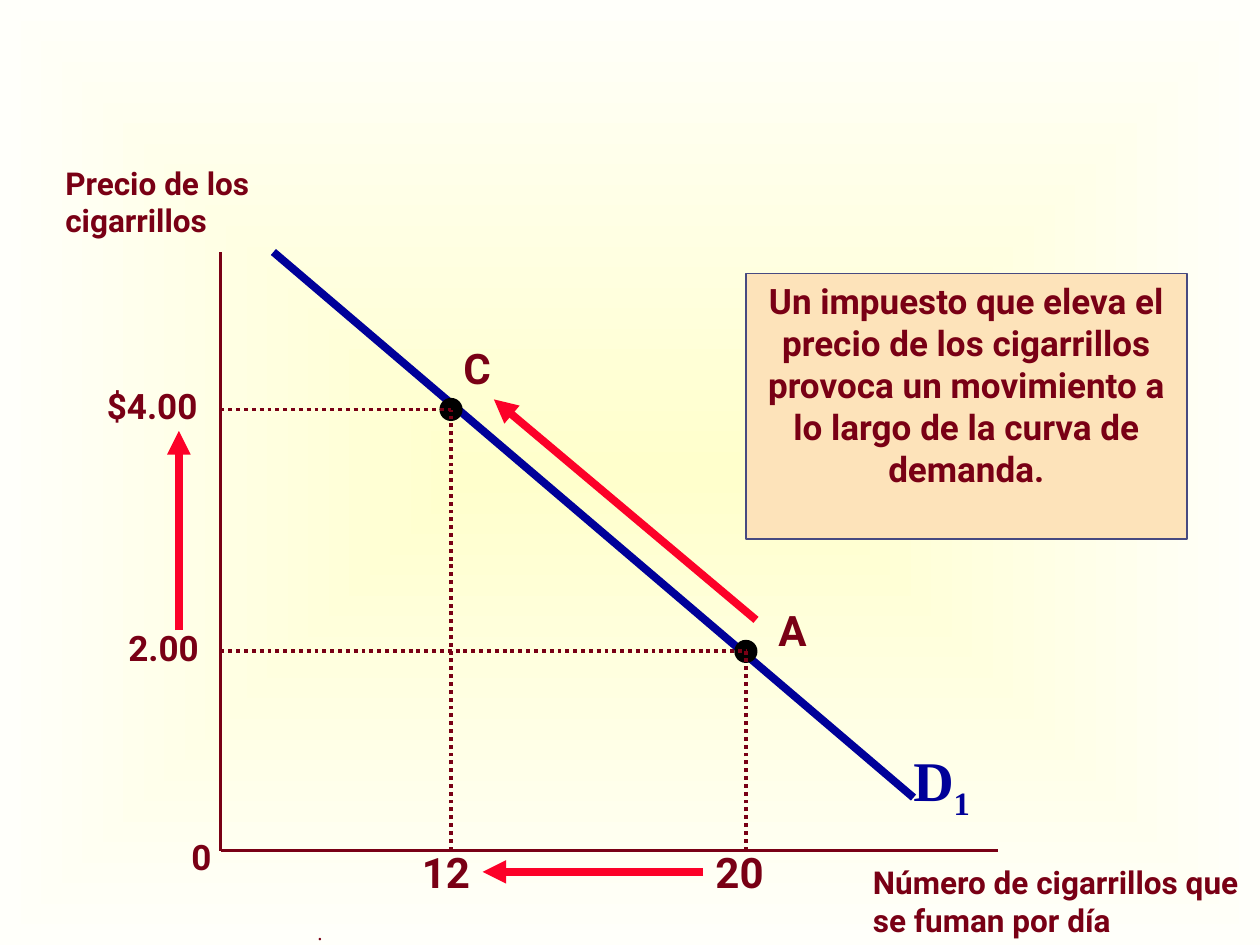
import pptx
import pptx.dml.color
import pptx.enum.dml
import pptx.enum.shapes
import pptx.enum.text
import pptx.oxml.ns
import pptx.util
import lxml.etree

Inches = pptx.util.Inches
Pt = pptx.util.Pt
qn = pptx.oxml.ns.qn

MAROON = "790015"
NAVY = "000099"
RED = "FC0128"
BLACK = "000000"
ORIGIN_X, ORIGIN_Y = 1.75, 6.75
POINT_C = (3.58, 3.25)
POINT_A = (5.92, 5.17)
DOT_SIZE = 0.17


def color(hex_string):
    return pptx.dml.color.RGBColor.from_string(hex_string)


def set_background(slide, center, edge):
    fill = slide.background.fill
    fill.gradient()
    for stop, hex_string, position in zip(fill.gradient_stops, (center, edge), (0, 1)):
        stop.color.rgb = color(hex_string)
        stop.position = position
    gradient = slide.background._cSld.find(".//" + qn("a:gradFill"))
    gradient.remove(gradient.find(qn("a:lin")))
    shading = lxml.etree.SubElement(gradient, qn("a:path"), {"path": "shape"})
    sides = {side: "50000" for side in "ltrb"}
    lxml.etree.SubElement(shading, qn("a:fillToRect"), sides)


def format_run(span, size, hex_string, font, bold):
    span.font.size = Pt(size)
    span.font.name = font
    span.font.bold = bold
    span.font.color.rgb = color(hex_string)


def write_text(box, text, size, hex_string=MAROON, font="Roboto", bold=True,
               centered=False, wrap=True, subscript=""):
    frame = box.text_frame
    frame.text = text
    frame.word_wrap = wrap
    frame.vertical_anchor = pptx.enum.text.MSO_ANCHOR.TOP
    para = frame.paragraphs[0]
    if centered:
        para.alignment = pptx.enum.text.PP_ALIGN.CENTER
    if subscript:
        span = para.add_run()
        span.text = subscript
        span._r.get_or_add_rPr().set("baseline", "-25000")
    for span in para.runs:
        format_run(span, size, hex_string, font, bold)


def add_label(slide, place, text, size, **style):
    box = slide.shapes.add_textbox(*map(Inches, place))
    write_text(box, text, size, **style)
    return box


def add_line(slide, start, end, hex_string, width, dotted=False, arrow=False):
    line = slide.shapes.add_connector(
        pptx.enum.shapes.MSO_CONNECTOR.STRAIGHT, *map(Inches, (*start, *end)))
    line.line.color.rgb = color(hex_string)
    line.line.width = Pt(width)
    if dotted:
        line.line.dash_style = pptx.enum.dml.MSO_LINE.ROUND_DOT
    if arrow:
        outline = line.line._get_or_add_ln()
        lxml.etree.SubElement(outline, qn("a:tailEnd"), {"type": "triangle"})
    lxml.etree.SubElement(line._element.spPr, qn("a:effectLst"))


def add_filled_shape(slide, kind, place, fill, outline):
    shape = slide.shapes.add_shape(kind, *map(Inches, place))
    shape.shadow.inherit = False
    shape.fill.solid()
    shape.fill.fore_color.rgb = color(fill)
    shape.line.color.rgb = color(outline)
    shape.line.width = Pt(1)
    return shape


def add_dot(slide, point):
    left, top = (value - DOT_SIZE / 2 for value in point)
    add_filled_shape(slide, pptx.enum.shapes.MSO_SHAPE.OVAL,
                     (left, top, DOT_SIZE, DOT_SIZE), BLACK, BLACK)


def add_guides(slide, point):
    x, y = point
    for foot in ((ORIGIN_X, y), (x, ORIGIN_Y)):
        add_line(slide, foot, point, MAROON, 2.25, dotted=True)


def add_axes_and_demand(slide):
    origin = (ORIGIN_X, ORIGIN_Y)
    for end in ((ORIGIN_X, 2), (7.92, ORIGIN_Y)):
        add_line(slide, origin, end, MAROON, 2.25)
    add_line(slide, (2.17, 2), (7.25, 6.33), NAVY, 4.5)
    add_label(slide, (7.15, 5.87, 0.83, 0.63), "D", 32, hex_string=NAVY,
              font="Times New Roman", subscript="1")


def add_labels(slide):
    labels = (
        ((1.42, 6.58, 0.83, 0.43), "0", 20),
        ((0.42, 1.25, 1.67, 1), "Precio de los cigarrillos", 18),
        ((6.83, 6.8, 3.17, 0.7), "Número de cigarrillos que se fuman por día", 18),
        ((6.08, 4.75, 0.33, 0.5), "A", 24),
        ((3.58, 2.67, 0.58, 0.5), "C", 24),
        ((5.58, 6.67, 0.75, 0.5), "20", 24),
        ((3.25, 6.67, 0.75, 0.5), "12", 24),
        ((0.92, 4.92, 1, 0.43), "2.00", 20),
        ((0.75, 3, 1, 0.43), "$4.00", 20),
    )
    for place, text, size in labels:
        add_label(slide, place, text, size)


def add_explanation(slide):
    box = add_filled_shape(slide, pptx.enum.shapes.MSO_SHAPE.RECTANGLE,
                           (5.92, 2.17, 3.5, 2.11), "FDE3BA", "474A81")
    write_text(box, "Un impuesto que eleva el precio de los cigarrillos provoca "
               "un movimiento a lo largo de la curva de demanda.", 20, centered=True)


def add_footer(slide):
    footer = add_label(slide, (0, 7, 5.08, 0.5), ".", 12, font="Times New Roman",
                       bold=False, centered=True, wrap=False)
    frame = footer.text_frame
    frame.vertical_anchor = pptx.enum.text.MSO_ANCHOR.BOTTOM
    frame.margin_top = frame.margin_bottom = 0


def main():
    deck = pptx.Presentation()
    deck.slide_width = Inches(10)
    deck.slide_height = Inches(7.5)
    page = deck.slides.add_slide(deck.slide_layouts[6])
    set_background(page, "FFFFCC", "FFFFFA")
    add_footer(page)
    add_axes_and_demand(page)
    add_explanation(page)
    for point in (POINT_A, POINT_C):
        add_dot(page, point)
        add_guides(page, point)
    add_labels(page)
    for start, end in (((6, 4.92), (3.92, 3.17)),
                       ((1.42, 5), (1.42, 3.42)),
                       ((5.58, 6.92), (3.83, 6.92))):
        add_line(page, start, end, RED, 4.5, arrow=True)
    deck.save("out.pptx")


if __name__ == "__main__":
    main()
